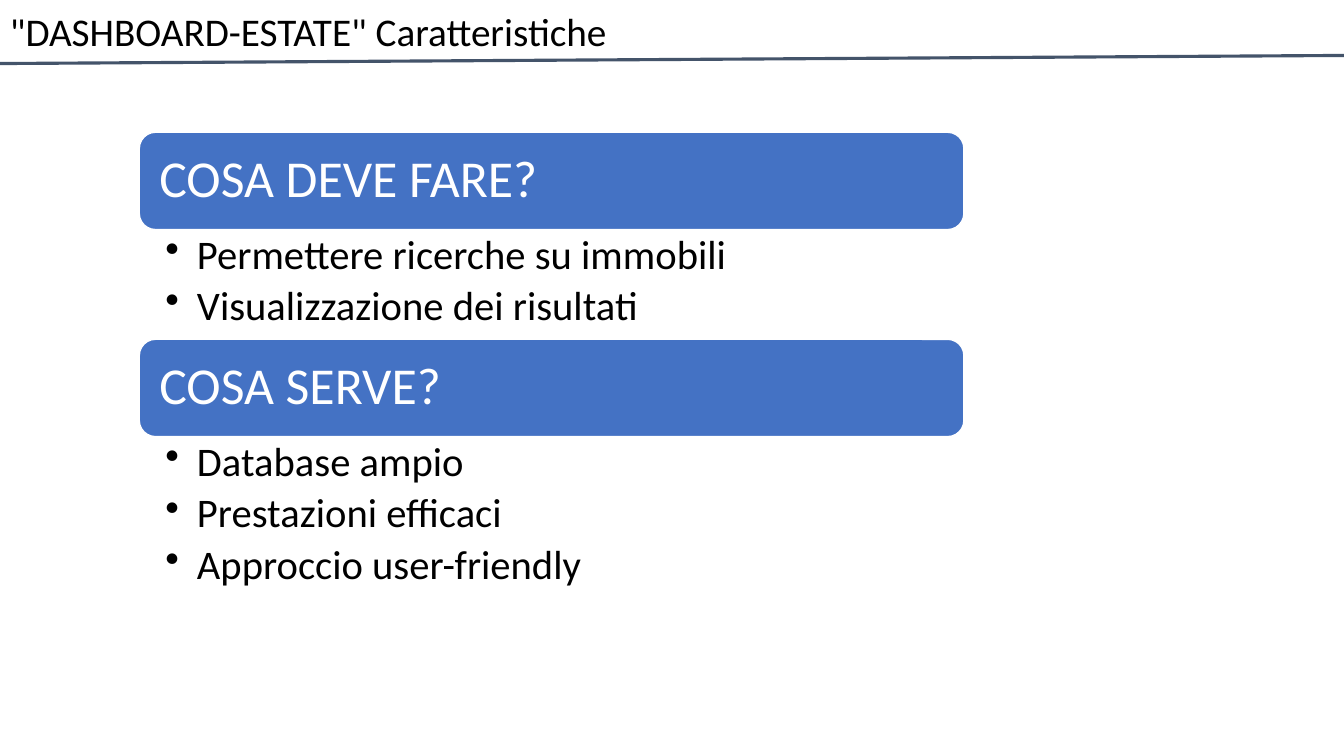
from lxml import etree
from pptx import Presentation
from pptx.dml.color import RGBColor
from pptx.enum.shapes import MSO_CONNECTOR, MSO_SHAPE
from pptx.enum.text import MSO_ANCHOR, PP_ALIGN
from pptx.oxml.ns import qn
from pptx.util import Pt

STRAIGHT = MSO_CONNECTOR.STRAIGHT
ROUNDED = MSO_SHAPE.ROUNDED_RECTANGLE
MIDDLE, TOP = MSO_ANCHOR.MIDDLE, MSO_ANCHOR.TOP
LEFT = PP_ALIGN.LEFT


def color(hex_code):
    return RGBColor.from_string(hex_code)


def write(shape, lines, size, hex_code, anchor, insets, bulleted=False):
    frame = shape.text_frame
    frame.word_wrap = True
    frame.vertical_anchor = anchor
    (frame.margin_left, frame.margin_top,
     frame.margin_right, frame.margin_bottom) = map(Pt, insets)
    for index, line in enumerate(lines):
        paragraph = frame.add_paragraph() if index else frame.paragraphs[0]
        paragraph.alignment = LEFT
        paragraph.line_spacing = 0.9
        if bulleted:
            paragraph.space_after = Pt(5.3)
            properties = paragraph._p.get_or_add_pPr()
            properties.set("marL", str(Pt(22.5)))
            properties.set("indent", str(Pt(-22.5)))
            etree.SubElement(properties, qn("a:buChar")).set("char", "•")
        run = paragraph.add_run()
        run.text = line
        run.font.name = "Calibri"
        run.font.size = Pt(size)
        run.font.color.rgb = color(hex_code)


prs = Presentation()
prs.slide_width, prs.slide_height = Pt(960), Pt(540)
slide = prs.slides.add_slide(prs.slide_layouts[6])

# Title
title = slide.shapes.add_textbox(Pt(0), Pt(-0.7), Pt(894), Pt(49.7))
write(title, ['"DASHBOARD-ESTATE" Caratteristiche'], 28, "000000", MIDDLE,
      (7.2, 3.6, 7.2, 3.6))

# Rule under the title
title_rule = slide.shapes.add_connector(STRAIGHT, Pt(0), Pt(45.4), Pt(960), Pt(39.6))
title_rule.line.color.rgb = color("44546A")
title_rule.line.width = Pt(2.25)
etree.SubElement(title_rule._element.spPr, qn("a:effectLst"))

# Questions, each a bar followed by its answers
questions = [
    ("COSA DEVE FARE?", ["Permettere ricerche su immobili",
                         "Visualizzazione dei risultati"]),
    ("COSA SERVE?", ["Database ampio", "Prestazioni efficaci",
                     "Approccio user-friendly"]),
]
block_left, block_width = 99.5, 589
bar_height, answer_height = 69.5, 39.2
top = 94.5

for question, answers in questions:
    bar = slide.shapes.add_shape(ROUNDED, Pt(block_left), Pt(top),
                                 Pt(block_width), Pt(bar_height))
    bar.shadow.inherit = False
    bar.fill.solid()
    bar.fill.fore_color.rgb = color("4472C4")
    bar.line.color.rgb = color("FFFFFF")
    bar.line.width = Pt(1)
    write(bar, [question], 37, "FFFFFF", MIDDLE, (11, 11, 11, 11))
    top += bar_height

    answers_height = answer_height * len(answers)
    answer_list = slide.shapes.add_textbox(Pt(block_left), Pt(top),
                                           Pt(block_width), Pt(answers_height))
    write(answer_list, answers, 29, "000000", TOP, (18.7, 3.6, 20.9, 3.6), bulleted=True)
    top += answers_height

prs.save("out.pptx")
